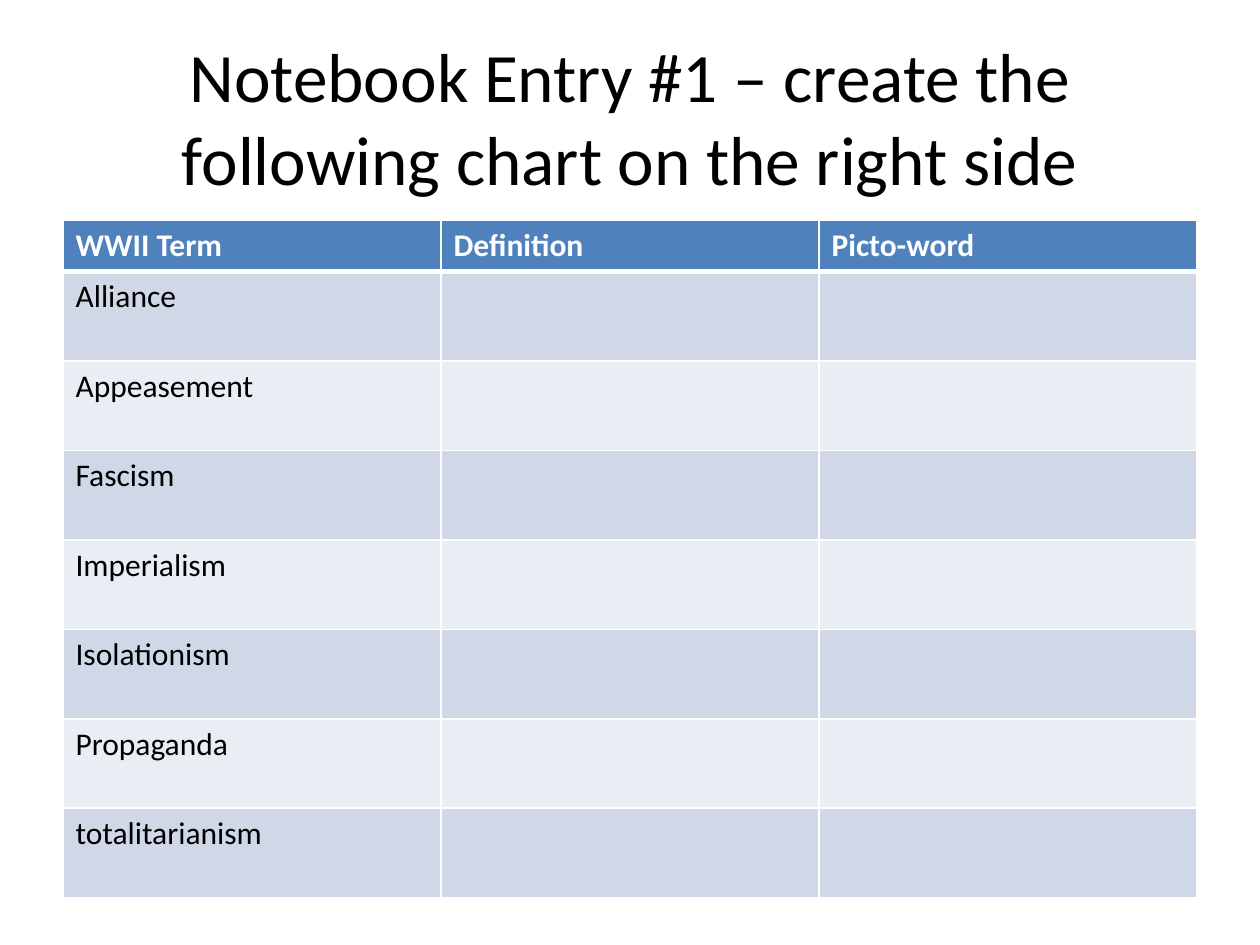
"""Build the notebook-entry slide: a title above a chart of WWII terms."""
import pptx
import pptx.dml.color
import pptx.enum.text
import pptx.oxml
import pptx.oxml.ns
import pptx.util

RGB = pptx.dml.color.RGBColor
WHITE = RGB(0xFF, 0xFF, 0xFF)
BLACK = RGB(0x00, 0x00, 0x00)
HEADER_BLUE = RGB(0x4F, 0x81, 0xBD)
BANDS = (RGB(0xD0, 0xD8, 0xE8), RGB(0xE9, 0xED, 0xF4))

HEADING = "Notebook Entry #1 – create the following chart on the right side"
COLUMNS = ("WWII Term", "Definition", "Picto-word")
TERMS = ("Alliance", "Appeasement", "Fascism", "Imperialism",
         "Isolationism", "Propaganda", "totalitarianism")

WIDTH, HEIGHT = pptx.util.Inches(10), pptx.util.Inches(7.5)
MARGIN = int(WIDTH * 0.05)
CONTENT_WIDTH = WIDTH - 2 * MARGIN
HEADER_HEIGHT, TERM_HEIGHT = pptx.util.Inches(0.4), pptx.util.Inches(0.71)


def write(frame, text, size=18, color=BLACK, bold=False, align=None):
    paragraph = frame.paragraphs[0]
    paragraph.alignment = align
    run = paragraph.add_run()
    run.text = text
    run.font.name = "Calibri"
    run.font.size = pptx.util.Pt(size)
    run.font.bold = bold
    run.font.color.rgb = color


def add_borders(cell, bottom=1, top=1):
    properties = cell._tc.get_or_add_tcPr()
    widths = {"lnL": 1, "lnR": 1, "lnT": top, "lnB": bottom}
    for position, (side, points) in enumerate(widths.items()):
        properties.insert(position, pptx.oxml.parse_xml(
            f'<a:{side} {pptx.oxml.ns.nsdecls("a")} w="{pptx.util.Pt(points)}">'
            f'<a:solidFill><a:srgbClr val="{WHITE}"/></a:solidFill></a:{side}>'))


def add_heading(slide):
    heading = slide.shapes.title
    heading.left, heading.top = MARGIN, int(HEIGHT * 0.04)
    heading.width, heading.height = CONTENT_WIDTH, pptx.util.Inches(1.25)
    heading.text_frame.word_wrap = True
    heading.text_frame.vertical_anchor = pptx.enum.text.MSO_ANCHOR.MIDDLE
    write(heading.text_frame, HEADING, size=39.6,
          align=pptx.enum.text.PP_ALIGN.CENTER)


def add_term_chart(slide):
    rows = [COLUMNS] + [(term, "", "") for term in TERMS]
    terms = slide.shapes.add_table(
        len(rows), len(COLUMNS), MARGIN, pptx.util.Inches(1.75), CONTENT_WIDTH,
        HEADER_HEIGHT + len(TERMS) * TERM_HEIGHT).table
    for r, texts in enumerate(rows):
        is_header = r == 0
        terms.rows[r].height = HEADER_HEIGHT if is_header else TERM_HEIGHT
        for c, text in enumerate(texts):
            cell = terms.cell(r, c)
            cell.fill.solid()
            cell.fill.fore_color.rgb = HEADER_BLUE if is_header else BANDS[(r - 1) % 2]
            add_borders(cell, bottom=3 if is_header else 1, top=3 if r == 1 else 1)
            if text:
                write(cell.text_frame, text, bold=is_header,
                      color=WHITE if is_header else BLACK)


def main():
    deck = pptx.Presentation()
    deck.slide_width, deck.slide_height = WIDTH, HEIGHT
    slide = deck.slides.add_slide(deck.slide_layouts.get_by_name("Title Only"))
    add_heading(slide)
    add_term_chart(slide)
    deck.save("out.pptx")


if __name__ == "__main__":
    main()
